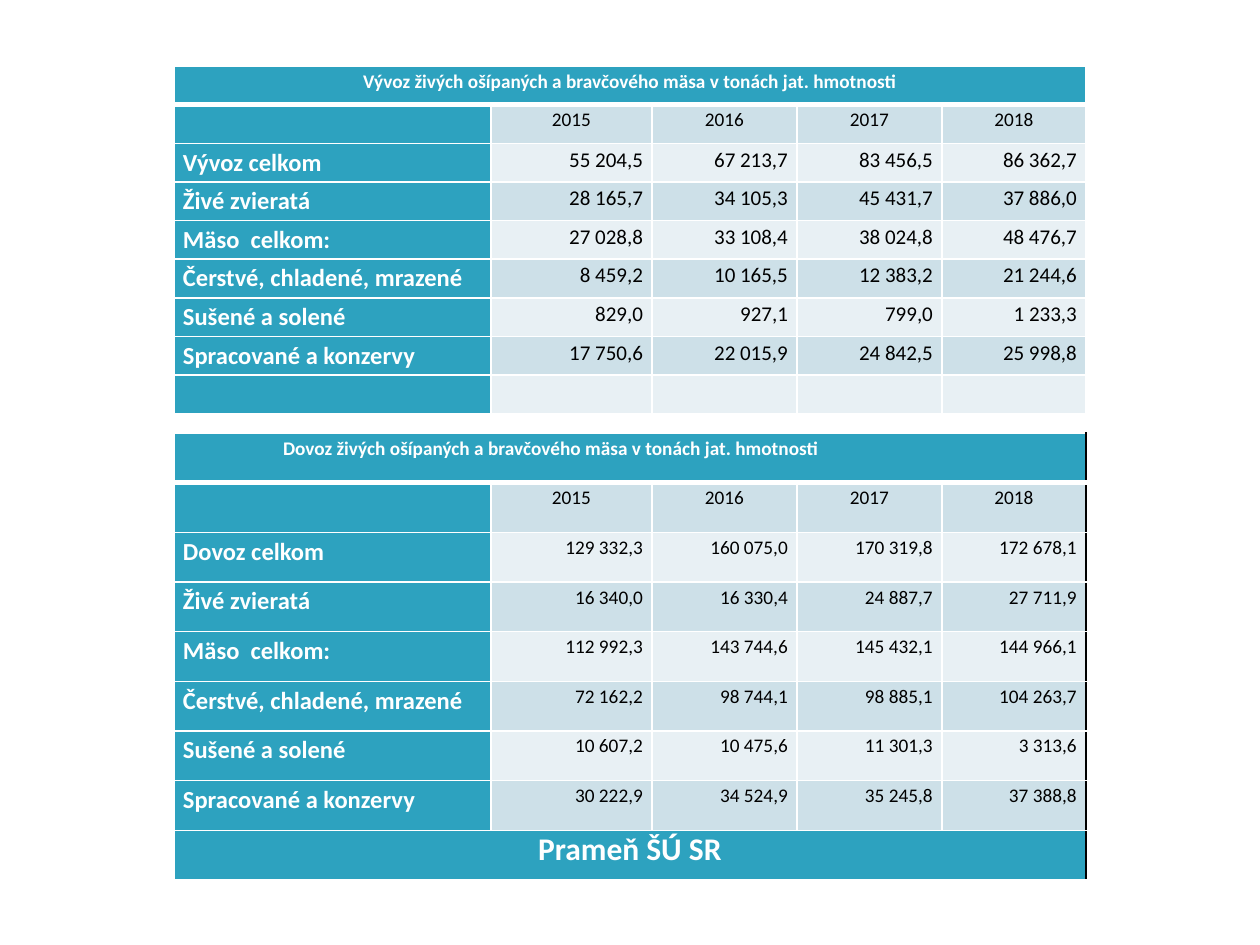
from dataclasses import dataclass

from lxml.etree import SubElement
from pptx import Presentation
from pptx.dml.color import RGBColor
from pptx.enum.text import PP_ALIGN as Align
from pptx.oxml.ns import qn
from pptx.util import Pt

PX = 914400 // 126


@dataclass(frozen=True)
class Theme:
    font: str = "Calibri"
    accent: str = "2DA2BF"
    band_dark: str = "CDE0E8"
    band_light: str = "E8F0F4"
    white: str = "FFFFFF"
    black: str = "000000"
    heading_size: int = 11
    label_size: int = 14
    source_size: int = 18
    thin: int = 1
    thick: int = 3


THEME = Theme()
YEARS = ["2015", "2016", "2017", "2018"]
COLUMN_WIDTHS = [317, 161, 145, 145, 144]
TABLE_LEFT = 174
CELL_INSET = 9
LINE_SPACING = 1.15

EXPORT_TITLE = "Vývoz živých ošípaných a bravčového mäsa v tonách jat. hmotnosti"
EXPORTS = [
    ("Vývoz celkom", 55204.5, 67213.7, 83456.5, 86362.7),
    ("Živé zvieratá", 28165.7, 34105.3, 45431.7, 37886.0),
    ("Mäso  celkom:", 27028.8, 33108.4, 38024.8, 48476.7),
    ("Čerstvé, chladené, mrazené", 8459.2, 10165.5, 12383.2, 21244.6),
    ("Sušené a solené", 829.0, 927.1, 799.0, 1233.3),
    ("Spracované a konzervy", 17750.6, 22015.9, 24842.5, 25998.8),
]
IMPORT_TITLE = "Dovoz živých ošípaných a bravčového mäsa v tonách jat. hmotnosti"
IMPORTS = [
    ("Dovoz celkom", 129332.3, 160075.0, 170319.8, 172678.1),
    ("Živé zvieratá", 16340.0, 16330.4, 24887.7, 27711.9),
    ("Mäso  celkom:", 112992.3, 143744.6, 145432.1, 144966.1),
    ("Čerstvé, chladené, mrazené", 72162.2, 98744.1, 98885.1, 104263.7),
    ("Sušené a solené", 10607.2, 10475.6, 11301.3, 3313.6),
    ("Spracované a konzervy", 30222.9, 34524.9, 35245.8, 37388.8),
]
SOURCE = "Prameň ŠÚ SR"


def format_tonnes(tonnes):
    """Slovak style: non-breaking space for thousands, decimal comma."""
    return f"{tonnes:,.1f}".replace(",", chr(160)).replace(".", ",")


def write_cell(cell, text, size, color, bold=False, align=Align.LEFT, spacing=LINE_SPACING):
    paragraph = cell.text_frame.paragraphs[0]
    paragraph.text = text
    paragraph.alignment = align
    paragraph.line_spacing = spacing
    for run in paragraph.runs:
        font = run.font
        font.name, font.size, font.bold = THEME.font, Pt(size), bold
        font.color.rgb = RGBColor.from_string(color)


def add_border(cell, side, color, width):
    line = SubElement(cell._tc.get_or_add_tcPr(), qn(f"a:ln{side}"), w=str(Pt(width)))
    SubElement(SubElement(line, qn("a:solidFill")), qn("a:srgbClr"), val=color)


def style_cell(cell, row, column, merged, right_edge):
    last_column = column == len(YEARS)
    edge = right_edge if last_column or merged else THEME.white
    add_border(cell, "L", THEME.white, THEME.thin)
    add_border(cell, "R", edge, THEME.thin)
    add_border(cell, "T", THEME.white, THEME.thick if row == 1 else THEME.thin)
    add_border(cell, "B", THEME.white, THEME.thick if row == 0 else THEME.thin)
    if merged or column == 0:
        fill = THEME.accent
    else:
        fill = THEME.band_dark if row % 2 else THEME.band_light
    cell.fill.solid()
    cell.fill.fore_color.rgb = RGBColor.from_string(fill)
    cell.margin_left = cell.margin_right = CELL_INSET * PX
    cell.margin_top = cell.margin_bottom = 0


def add_trade_table(slide, top, height, title, products, value_size,
                    title_indent=None, source="", right_edge=THEME.white):
    """Title row, year row, one row per product, and a closing row."""
    row_count = len(products) + 3
    table = slide.shapes.add_table(
        row_count, len(COLUMN_WIDTHS), TABLE_LEFT * PX, top * PX,
        sum(COLUMN_WIDTHS) * PX, height * PX).table
    table.first_row = table.horz_banding = False
    for column, width in zip(table.columns, COLUMN_WIDTHS):
        column.width = width * PX
    for row in table.rows:
        row.height = height * PX // row_count

    merged_rows = {0, row_count - 1} if source else {0}
    for row in range(row_count):
        for column in range(len(COLUMN_WIDTHS)):
            style_cell(table.cell(row, column), row, column, row in merged_rows, right_edge)
    for row in merged_rows:
        table.cell(row, 0).merge(table.cell(row, len(YEARS)))

    title_cell = table.cell(0, 0)
    write_cell(title_cell, title, THEME.heading_size, THEME.white, True,
               Align.LEFT if title_indent else Align.CENTER)
    if title_indent:
        properties = title_cell.text_frame.paragraphs[0]._p.get_or_add_pPr()
        properties.set("marL", str(title_indent * PX))
    for column, year in enumerate(YEARS, 1):
        write_cell(table.cell(1, column), year, THEME.heading_size, THEME.black,
                   align=Align.CENTER)
    for row, (product, *tonnages) in enumerate(products, 2):
        write_cell(table.cell(row, 0), product, THEME.label_size, THEME.white, True)
        for column, tonnes in enumerate(tonnages, 1):
            write_cell(table.cell(row, column), format_tonnes(tonnes), value_size,
                       THEME.black, align=Align.RIGHT)
    if source:
        write_cell(table.cell(row_count - 1, 0), source, THEME.source_size,
                   THEME.white, True, Align.CENTER, 1.0)


def main():
    deck = Presentation()
    deck.slide_width, deck.slide_height = 1260 * PX, 945 * PX
    slide = deck.slides.add_slide(deck.slide_layouts[6])
    add_trade_table(slide, 66, 348, EXPORT_TITLE, EXPORTS, value_size=12)
    add_trade_table(slide, 433, 447, IMPORT_TITLE, IMPORTS, value_size=11,
                    title_indent=100, source=SOURCE, right_edge=THEME.black)
    deck.save("out.pptx")


if __name__ == "__main__":
    main()
